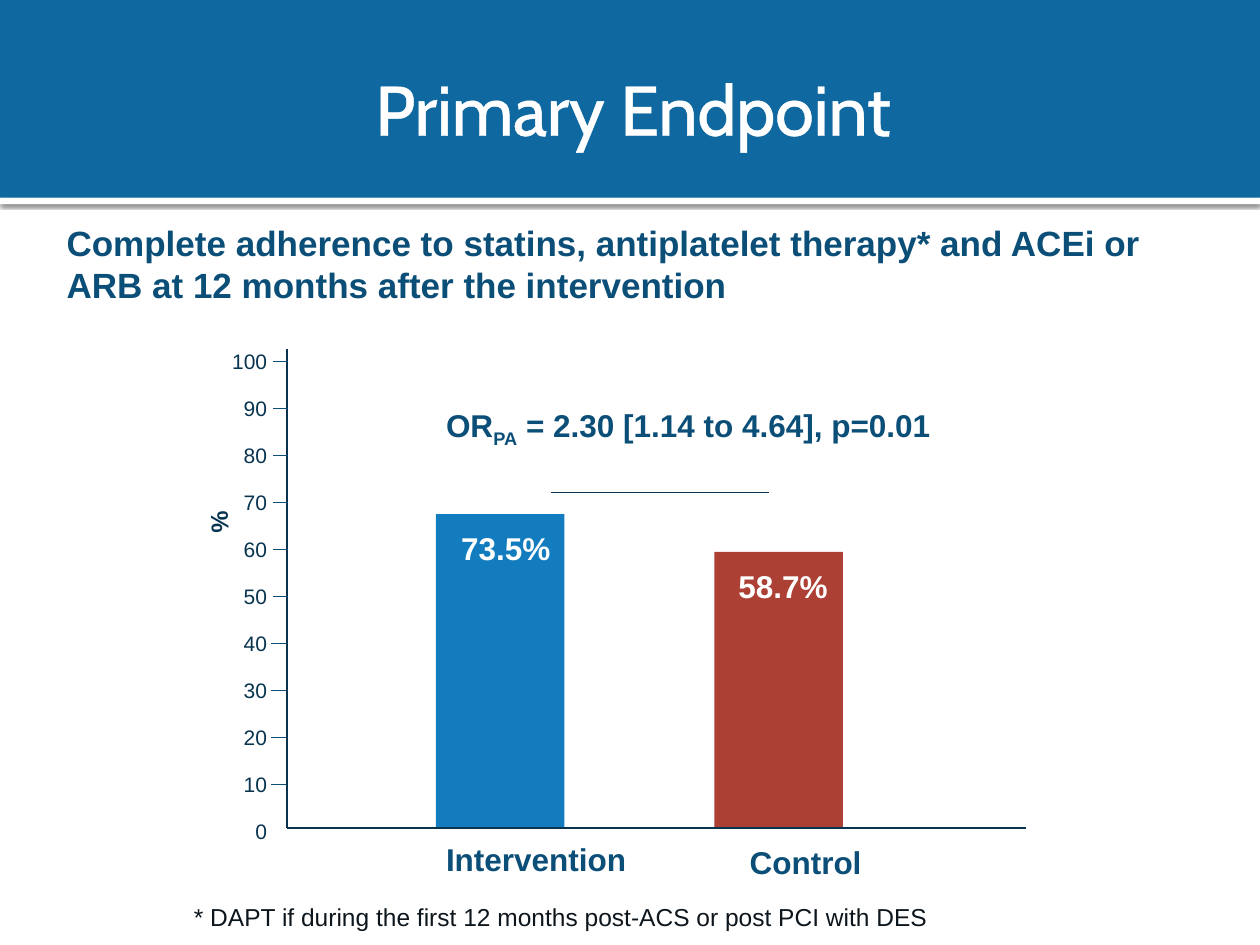
import dataclasses
import lxml.etree
import pptx
import pptx.dml.color
import pptx.enum.shapes
import pptx.enum.text
import pptx.oxml
import pptx.oxml.ns
import pptx.util

ALIGN = pptx.enum.text.PP_ALIGN
ANCHOR = pptx.enum.text.MSO_ANCHOR
qn = pptx.oxml.ns.qn


@dataclasses.dataclass(frozen=True)
class Theme:
    font: str = "Arial"
    title_font: str = "Cabin"
    white: str = "FFFFFF"
    banner: str = "0F689F"
    heading: str = "0B4E77"
    axis: str = "083450"
    note: str = "0D161D"
    intervention: str = "127CBE"
    control: str = "AD4035"
    title_size: int = 40
    heading_size: int = 20
    label_size: int = 18
    note_size: int = 14
    tick_size: int = 12


THEME = Theme()


@dataclasses.dataclass(frozen=True)
class Box:
    """A region measured on a grid of 100 columns by 75 rows over the page."""
    left: float
    top: float
    width: float
    height: float

    def inner(self, column, row, columns, rows):
        return Box(self.left + column, self.top + row, columns, rows)

    def lengths(self):
        return [grid(value) for value in
                (self.left, self.top, self.width, self.height)]


def grid(units):
    return pptx.util.Inches(units / 10)


def color(value):
    return pptx.dml.color.RGBColor.from_string(value)


def add_child(parent, tag, **attributes):
    child = lxml.etree.SubElement(parent, qn(tag))
    for name, value in attributes.items():
        child.set(name, str(value))
    return child


def add_bar(page, box, fill):
    bar = page.shapes.add_shape(
        pptx.enum.shapes.MSO_SHAPE.RECTANGLE, *box.lengths())
    bar.shadow.inherit = False
    bar.fill.solid()
    bar.fill.fore_color.rgb = color(fill)
    bar.line.fill.background()
    return bar


def add_line(page, box, stroke, weight):
    """Draw a line from the top left to the bottom right of the box."""
    left, top, width, height = box.lengths()
    line = page.shapes.add_connector(
        pptx.enum.shapes.MSO_CONNECTOR.STRAIGHT,
        left, top, left + width, top + height)
    line.line.color.rgb = color(stroke)
    line.line.width = pptx.util.Pt(weight)
    add_child(line._element.spPr, "a:effectLst")


def add_text(page, box, text, size=THEME.label_size, fill=THEME.heading,
             font=THEME.font, bold=False, align=ALIGN.LEFT, anchor=ANCHOR.TOP,
             wrap=False, margins=(0, 0, 0, 0), rotation=0, outline=None):
    """Place text; a list gives (words, baseline percent) spans."""
    shape = page.shapes.add_textbox(*box.lengths())
    shape.rotation = rotation
    frame = shape.text_frame
    frame.word_wrap = wrap
    frame.vertical_anchor = anchor
    (frame.margin_left, frame.margin_top,
     frame.margin_right, frame.margin_bottom) = map(grid, margins)
    para = frame.paragraphs[0]
    para.alignment = align
    for words, baseline in [(text, 0)] if isinstance(text, str) else text:
        span = para.add_run()
        span.text = words
        span.font.name = font
        span.font.size = pptx.util.Pt(size)
        span.font.bold = bold
        span.font.color.rgb = color(fill)
        properties = span._r.get_or_add_rPr()
        if baseline:
            properties.set("baseline", str(baseline * 1000))
        if outline:
            stroke = add_child(properties, "a:ln", w=pptx.util.Pt(outline))
            add_child(add_child(stroke, "a:solidFill"), "a:srgbClr", val=fill)
            properties.insert(0, stroke)


def add_banner(page, box):
    rule = add_bar(page, box.inner(0, 15.7, box.width, 0.5), THEME.white)
    shadow = add_child(
        rule._element.spPr.find(qn("a:effectLst")), "a:outerShdw",
        blurRad=pptx.util.Pt(2.5), dist=pptx.util.Pt(0.8),
        dir=5400000, rotWithShape=0)
    add_child(add_child(shadow, "a:srgbClr", val="000000"),
              "a:alpha", val=60000)
    add_bar(page, box.inner(0, 0, box.width, 15.7), THEME.banner)
    add_text(page, box.inner(5, 1.7, 90, 13.7), "Primary Endpoint",
             size=THEME.title_size, fill=THEME.white, font=THEME.title_font,
             align=ALIGN.CENTER, anchor=ANCHOR.MIDDLE, wrap=True,
             margins=(1, 0.5, 0.5, 0.5), outline=1.45)


def add_scale(page, box):
    first, step, digit = 1, 3.73, 0.93
    for index, value in enumerate(range(100, -1, -10)):
        middle = first + index * step
        width = digit * len(str(value))
        add_text(page, box.inner(-1.6 - width, middle - 1, width, 2),
                 str(value), size=THEME.tick_size, fill=THEME.axis,
                 align=ALIGN.RIGHT)
        if value:
            start = -1.1 if value >= 50 else -1.25
            add_line(page, box.inner(start, middle, 1.15, 0),
                     THEME.heading, 0.75)
    add_text(page, box.inner(-7.7, 11.2, 4.4, 2.4), "%", size=THEME.note_size,
             fill=THEME.axis, bold=True, wrap=True, rotation=266.6)


def add_bars(page, box):
    groups = (
        # name, value, fill, bar column, bar rows, value column, name place
        ("Intervention", "73.5%", THEME.intervention, 11.8, 24.9, 13.8,
         (12.6, 39, 14.4)),
        ("Control", "58.7%", THEME.control, 33.9, 21.9, 35.8,
         (36.7, 39.2, 9)),
    )
    for name, value, fill, column, rows, value_column, place in groups:
        top = box.height - rows
        add_bar(page, box.inner(column, top, 10.2, rows), fill)
        add_text(page, box.inner(value_column, top + 1.2, 7.2, 3), value,
                 fill=THEME.white, bold=True)
        name_column, name_row, name_width = place
        add_text(page, box.inner(name_column, name_row, name_width, 3), name,
                 bold=True)


def add_plot(page, box):
    add_bars(page, box)
    add_line(page, box.inner(0, box.height, box.width, 0), THEME.axis, 1)
    add_line(page, box.inner(0, 0, 0, box.height), THEME.axis, 1)
    add_scale(page, box)
    add_text(page, box.inner(12.6, 4.5, 39, 3),
             [("OR", 0), ("PA", -25), (" = 2.30 [1.14 to 4.64], p=0.01", 0)],
             bold=True)
    add_line(page, box.inner(20.9, 11.4, 17.3, 0), THEME.axis, 0.5)


def add_statement(page, box, text, **style):
    add_text(page, box, text, wrap=True, margins=(1, 0.5, 1, 0.5), **style)


def main():
    deck = pptx.Presentation()
    deck.slide_width, deck.slide_height = grid(100), grid(75)
    page = deck.slides.add_slide(deck.slide_layouts[6])
    add_banner(page, Box(0, 0, 100, 16.2))
    add_statement(page, Box(4.3, 17.1, 89, 7.7),
                  "Complete adherence to statins, antiplatelet therapy* and "
                  "ACEi or ARB at 12 months after the intervention",
                  size=THEME.heading_size, bold=True)
    add_plot(page, Box(22.8, 27.7, 58.6, 38))
    add_statement(page, Box(14.4, 71.1, 70.1, 3.4),
                  "* DAPT if during the first 12 months post-ACS or post PCI "
                  "with DES", size=THEME.note_size, fill=THEME.note)
    deck.save("out.pptx")


if __name__ == "__main__":
    main()
